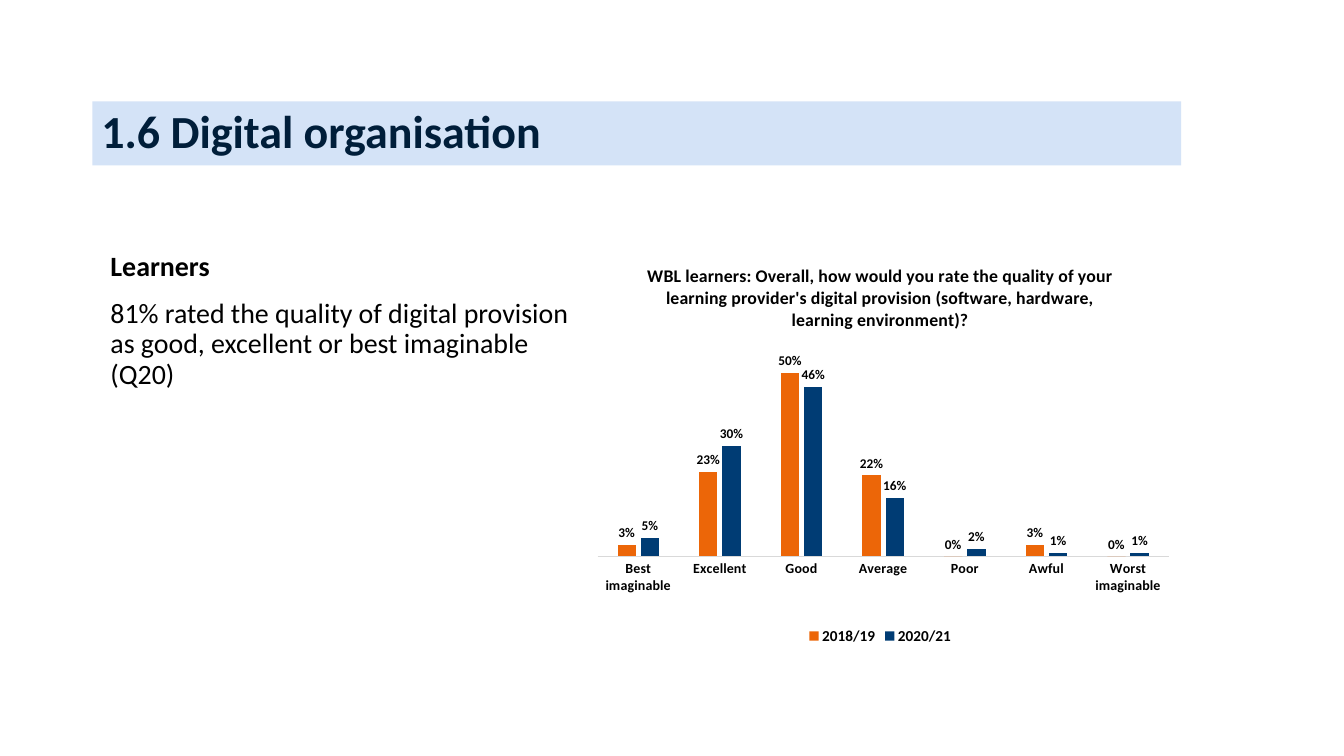
import pptx
import pptx.chart.data
import pptx.dml.color
import pptx.enum.chart
import pptx.enum.shapes
import pptx.enum.text
import pptx.oxml
import pptx.oxml.ns
import pptx.util
from pptx.util import Cm

FONT = "Calibri"
COLOURS = {
    "banner": "D4E3F7",
    "heading": "001E3A",
    "text": "000000",
    "axis": "D9D9D9",
    "2018/19": "EC6608",
    "2020/21": "003C74",
}
CATEGORIES = ["Best imaginable", "Excellent", "Good", "Average", "Poor", "Awful", "Worst imaginable"]
RATINGS = {
    "2018/19": [0.03, 0.23, 0.5, 0.22, 0, 0.03, 0],
    "2020/21": [0.05, 0.3, 0.46, 0.16, 0.02, 0.01, 0.01],
}
QUESTION = (
    "WBL learners: Overall, how would you rate the quality of your "
    "learning provider's digital provision (software, hardware, learning environment)?"
)
PLOT_LAYOUT = {"x": 0.03, "y": 0.22, "w": 0.95, "h": 0.55}


def colour(name):
    """Return the named colour."""
    return pptx.dml.color.RGBColor.from_string(COLOURS[name])


def style_font(font, size, bold=True, colour_name="text"):
    """Set typeface, size, weight and colour of a font."""
    font.name = FONT
    font.size = pptx.util.Pt(size)
    font.bold = bold
    font.color.rgb = colour(colour_name)


def add_banner(slide, text):
    """Add the heading on its tinted bar."""
    banner = slide.shapes.add_shape(
        pptx.enum.shapes.MSO_SHAPE.RECTANGLE, Cm(2.57), Cm(2.82), Cm(30.25), Cm(1.78)
    )
    banner.shadow.inherit = False
    banner.fill.solid()
    banner.fill.fore_color.rgb = colour("banner")
    banner.line.fill.background()
    banner.text_frame.text = text
    banner.text_frame.vertical_anchor = pptx.enum.text.MSO_ANCHOR.MIDDLE
    paragraph = banner.text_frame.paragraphs[0]
    paragraph.alignment = pptx.enum.text.PP_ALIGN.LEFT
    paragraph.line_spacing = 0.9
    style_font(paragraph.runs[0].font, 36.2, colour_name="heading")


def add_finding(slide, heading, finding):
    """Add a bold heading with its finding below."""
    box = slide.shapes.add_textbox(Cm(2.82), Cm(6.88), Cm(13.31), Cm(5.21))
    frame = box.text_frame
    frame.word_wrap = True
    frame.text = f"{heading}\n{finding}"
    for index, paragraph in enumerate(frame.paragraphs):
        paragraph.line_spacing = 0.9
        paragraph.space_before = pptx.util.Pt(13.8 if index else 0)
        style_font(paragraph.runs[0].font, 22, bold=index == 0)


def set_plot_layout(chart):
    """Fix the inner plot area within the chart."""
    sizes = "".join(f'<c:{key} val="{value}"/>' for key, value in PLOT_LAYOUT.items())
    layout = pptx.oxml.parse_xml(
        f'<c:layout {pptx.oxml.ns.nsdecls("c")}><c:manualLayout>'
        '<c:layoutTarget val="inner"/><c:xMode val="edge"/><c:yMode val="edge"/>'
        f"{sizes}</c:manualLayout></c:layout>"
    )
    plot_area = chart.plots[0]._element.getparent()
    for previous in plot_area.findall(pptx.oxml.ns.qn("c:layout")):
        plot_area.remove(previous)
    plot_area.insert(0, layout)


def style_axes(chart):
    """Show only the category axis and its labels."""
    ticks = pptx.enum.chart.XL_TICK_MARK
    category_axis = chart.category_axis
    category_axis.major_tick_mark = ticks.NONE
    category_axis.minor_tick_mark = ticks.NONE
    category_axis.format.line.color.rgb = colour("axis")
    category_axis.format.line.width = pptx.util.Pt(0.75)
    style_font(category_axis.tick_labels.font, 11)
    value_axis = chart.value_axis
    value_axis.minimum_scale = 0
    value_axis.maximum_scale = 0.6
    value_axis.has_major_gridlines = False
    value_axis.visible = False


def style_series(series):
    """Colour the columns of a series and label them."""
    series.format.fill.solid()
    series.format.fill.fore_color.rgb = colour(series.name)
    series.invert_if_negative = False
    labels = series.data_labels
    labels.show_value = True
    labels.number_format = "0%"
    labels.number_format_is_linked = False
    labels.position = pptx.enum.chart.XL_LABEL_POSITION.OUTSIDE_END
    style_font(labels.font, 10.5)


def add_ratings_chart(slide):
    """Add the clustered columns comparing both years."""
    data = pptx.chart.data.CategoryChartData(number_format="0%")
    data.categories = CATEGORIES
    for year, values in RATINGS.items():
        data.add_series(year, values)
    chart = slide.shapes.add_chart(
        pptx.enum.chart.XL_CHART_TYPE.COLUMN_CLUSTERED,
        Cm(16.1), Cm(6.88), Cm(16.71), Cm(11.15), data,
    ).chart
    style_font(chart.font, 10, bold=False)
    chart.has_title = True
    chart.chart_title.include_in_layout = False
    chart.chart_title.text_frame.text = QUESTION
    style_font(chart.chart_title.text_frame.paragraphs[0].runs[0].font, 14)
    chart.has_legend = True
    chart.legend.position = pptx.enum.chart.XL_LEGEND_POSITION.BOTTOM
    chart.legend.include_in_layout = False
    style_font(chart.legend.font, 12)
    plot = chart.plots[0]
    plot.vary_by_categories = False
    plot.gap_width = 219
    plot.overlap = -27
    for series in plot.series:
        style_series(series)
    style_axes(chart)
    set_plot_layout(chart)


def main():
    """Build and save the slide."""
    presentation = pptx.Presentation()
    presentation.slide_width = Cm(37.34)
    presentation.slide_height = Cm(21.01)
    slide = presentation.slides.add_slide(presentation.slide_layouts[6])
    add_banner(slide, "1.6 Digital organisation")
    add_finding(
        slide,
        "Learners",
        "81% rated the quality of digital provision as good, excellent or best imaginable (Q20)",
    )
    add_ratings_chart(slide)
    presentation.save("out.pptx")


if __name__ == "__main__":
    main()
